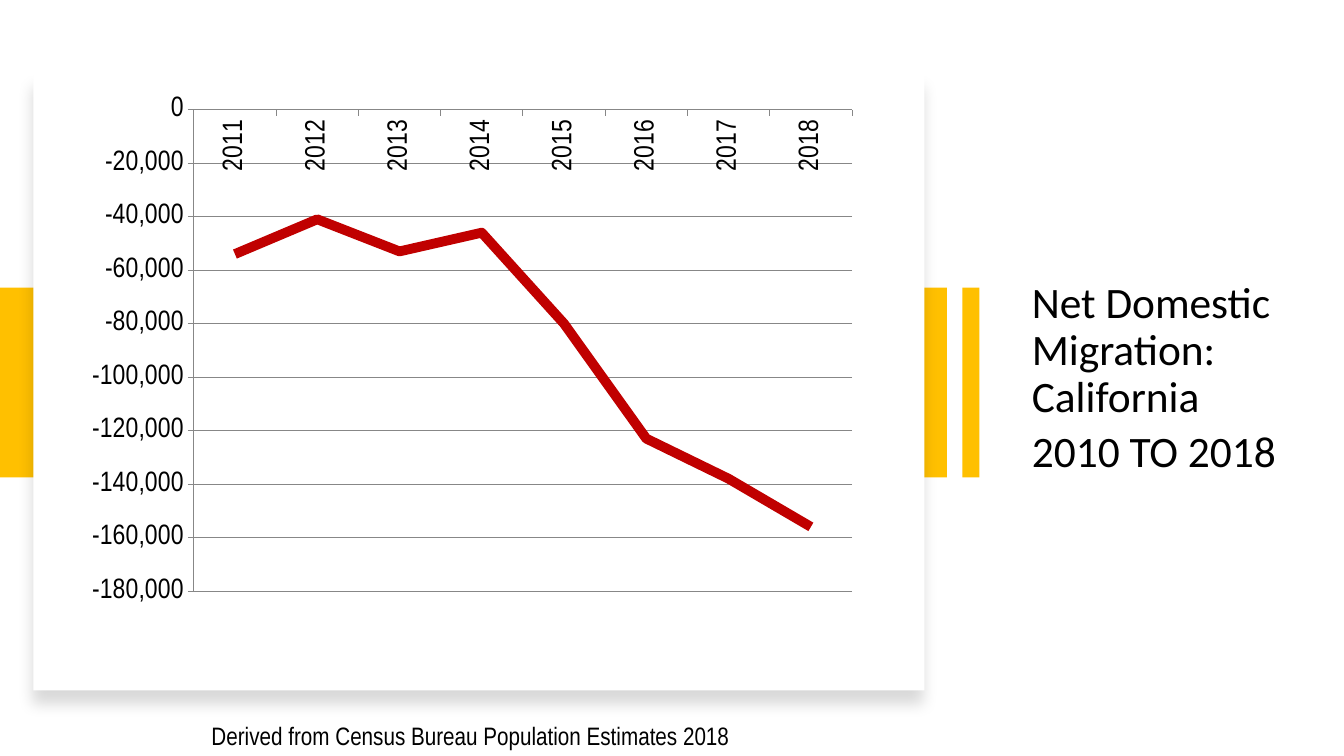
from pptx import Presentation
from pptx.chart.data import CategoryChartData as ChartData
from pptx.dml.color import RGBColor as RGB
from pptx.enum.chart import XL_CHART_TYPE as Kind, XL_TICK_MARK as Tick
from pptx.enum.shapes import MSO_SHAPE as Form
from pptx.enum.text import MSO_ANCHOR as Anchor
from pptx.oxml import parse_xml
from pptx.oxml.ns import nsdecls, qn
from pptx.util import Pt

GOLD = RGB(0xFF, 0xC0, 0x00)
WHITE = RGB(0xFF, 0xFF, 0xFF)
BLACK = RGB(0x00, 0x00, 0x00)
RED = RGB(0xC0, 0x00, 0x00)
GRAY = RGB(0x87, 0x87, 0x87)

YEARS = [str(year) for year in range(2011, 2019)]
MOVES = [-54000, -41000, -53000, -46000, -80000, -123000, -138000, -156000]


def place(box):
    return [Pt(side) for side in box]


def add_text(slide, box, lines, size, font, color=BLACK, anchor=Anchor.TOP,
             space=None, after=6):
    frame = slide.shapes.add_textbox(*place(box)).text_frame
    frame.word_wrap = True
    frame.vertical_anchor = anchor
    for i, line in enumerate(lines):
        para = frame.add_paragraph() if i else frame.paragraphs[0]
        para.line_spacing = space
        para.space_after = Pt(after)
        run = para.add_run()
        run.text = line
        run.font.size = Pt(size)
        run.font.name = font
        run.font.color.rgb = color


def add_rect(slide, box, fill):
    rect = slide.shapes.add_shape(Form.RECTANGLE, *place(box))
    rect.shadow.inherit = False
    rect.fill.solid()
    rect.fill.fore_color.rgb = fill
    rect.line.fill.background()
    return rect


def add_shade(shape, blur, gap, alpha):
    effects = shape._element.spPr.find(qn("a:effectLst"))
    effects.append(parse_xml(
        f'<a:outerShdw {nsdecls("a")} blurRad="{Pt(blur)}" dist="{Pt(gap)}" '
        f'dir="5400000" algn="t" rotWithShape="0"><a:srgbClr val="{BLACK}">'
        f'<a:alpha val="{alpha * 1000}"/></a:srgbClr></a:outerShdw>'))


def set_plot(chart, x, y, w, h):
    area = chart._chartSpace.chart.plotArea
    for old in area.findall(qn("c:layout")):
        area.remove(old)
    area.insert(0, parse_xml(
        f'<c:layout {nsdecls("c")}><c:manualLayout>'
        '<c:layoutTarget val="inner"/><c:xMode val="edge"/><c:yMode val="edge"/>'
        f'<c:x val="{x}"/><c:y val="{y}"/><c:w val="{w}"/><c:h val="{h}"/>'
        '</c:manualLayout></c:layout>'))


def style_axis(axis, turn):
    axis.major_tick_mark = Tick.OUTSIDE
    axis.minor_tick_mark = Tick.NONE
    axis.format.line.color.rgb = GRAY
    axis.format.line.width = Pt(0.75)
    font = axis.tick_labels.font
    font.size = Pt(20)
    font.name = "Arial Narrow"
    font.color.rgb = BLACK
    body = axis._element.find(qn("c:txPr")).find(qn("a:bodyPr"))
    body.set("rot", str(turn * 60000))
    body.set("vert", "horz")


def add_graph(slide, box):
    data = ChartData(number_format="#,##0")
    data.categories = YEARS
    data.add_series("Series 1", MOVES)
    chart = slide.shapes.add_chart(Kind.LINE, *place(box), data).chart
    chart.has_legend = False
    chart.has_title = False
    chart.font.size = Pt(18)
    chart.font.name = "Calibri"
    chart.font.color.rgb = BLACK
    set_plot(chart, 0.159, 0.026, 0.785, 0.838)

    style_axis(chart.category_axis, -90)
    axis = chart.value_axis
    style_axis(axis, 0)
    axis.minimum_scale = -180000
    axis.maximum_scale = 0
    axis.major_unit = 20000
    axis.tick_labels.number_format = "#,##0"
    axis.tick_labels.number_format_is_linked = False
    axis.has_major_gridlines = True
    axis.major_gridlines.format.line.color.rgb = GRAY
    axis.major_gridlines.format.line.width = Pt(0.75)

    plot = chart.plots[0]
    plot.vary_by_categories = False
    series = plot.series[0]
    series.smooth = False
    series.format.line.color.rgb = RED
    series.format.line.width = Pt(7)


def add_band(slide, box):
    left, top, width, height = box
    thin, gap = 12.2, 11
    add_rect(slide, (left, top, width - thin - gap, height), GOLD)
    add_rect(slide, (left + width - thin, top, thin, height), GOLD)


def add_card(slide, box):
    left, top, width, height = box
    card = add_rect(slide, box, WHITE)
    add_shade(card, blur=11, gap=10, alpha=15)
    add_graph(slide, (left + 19.4, top + 15.1, width - 37.4, height - 30.2))


def main():
    deck = Presentation()
    deck.slide_width, deck.slide_height = Pt(960), Pt(540)
    slide = deck.slides.add_slide(deck.slide_layouts[6])
    add_text(slide, (730, 159, 194.4, 224),
             ["Net Domestic Migration: California", "2010 TO 2018"],
             size=31, font="Calibri", anchor=Anchor.MIDDLE, space=0.9)
    add_band(slide, (0, 205.5, 699.6, 135.4))
    add_card(slide, (23.8, 52.6, 636.4, 440.6))
    add_text(slide, (144, 511.2, 468, 28.8),
             ["Derived from Census Bureau Population Estimates 2018"],
             size=18, font="Arial Narrow")
    deck.save("out.pptx")


if __name__ == "__main__":
    main()
